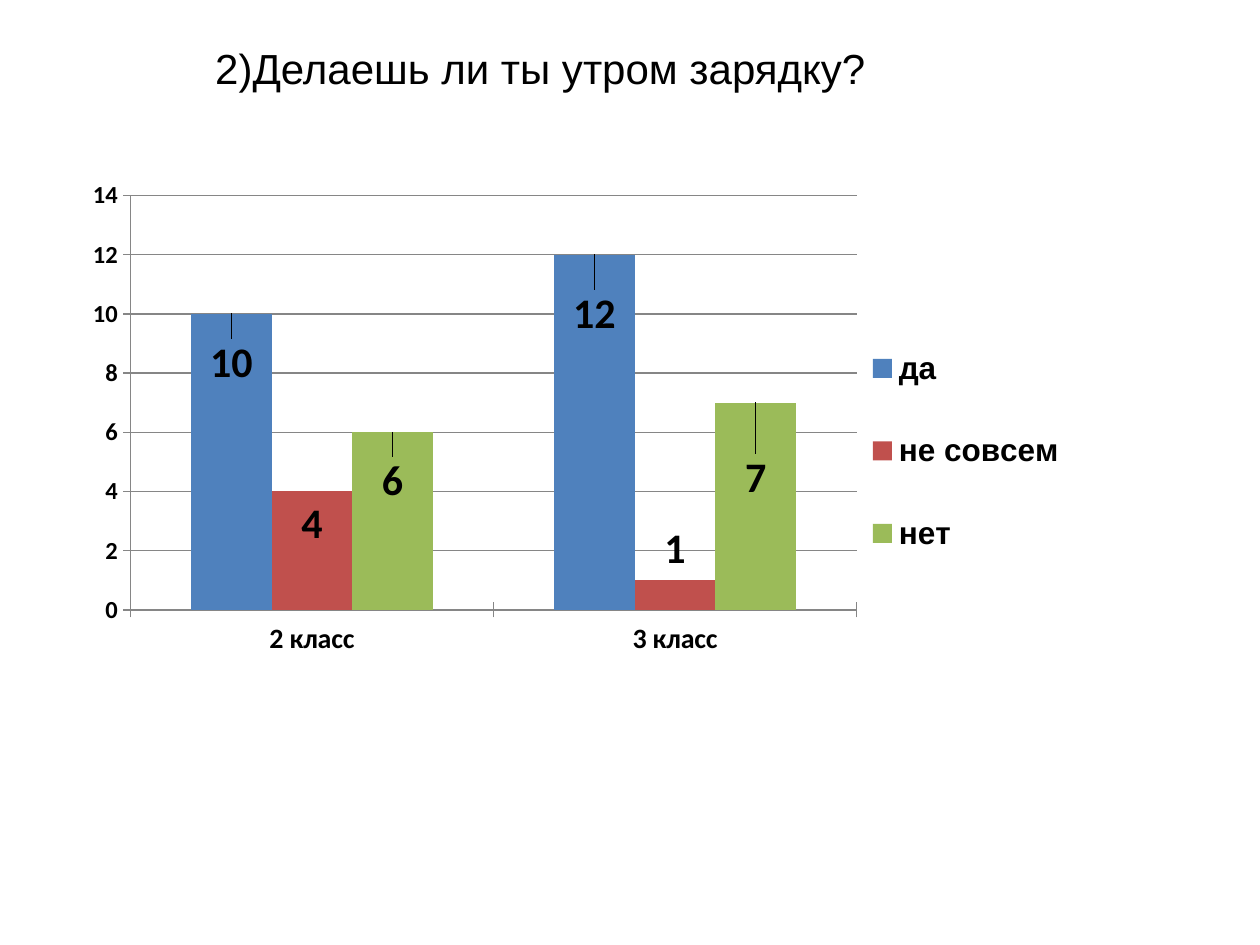
from pptx import Presentation
from pptx.chart.data import CategoryChartData
from pptx.dml.color import RGBColor
from pptx.enum.chart import XL_CHART_TYPE as Kind, XL_LABEL_POSITION as Spot
from pptx.enum.chart import XL_LEGEND_POSITION as Side, XL_TICK_MARK as Tick
from pptx.enum.text import MSO_ANCHOR as Anchor, MSO_AUTO_SIZE as Auto, PP_ALIGN as Align
from pptx.oxml import parse_xml
from pptx.oxml.ns import nsdecls
from pptx.util import Inches, Pt

BLACK = RGBColor(0x00, 0x00, 0x00)
GRAY = RGBColor(0x86, 0x86, 0x86)
BLUE = RGBColor(0x4F, 0x81, 0xBD)
RED = RGBColor(0xC0, 0x50, 0x4D)
GREEN = RGBColor(0x9B, 0xBB, 0x59)

CLASSES = ["2 класс", "3 класс"]
# Answer, counts by class, bar colour, downward label shift by class
ANSWERS = [
    ("да", (10, 12), BLUE, (0.15, 0.17)),
    ("не совсем", (4, 1), RED, (0.12, None)),
    ("нет", (6, 7), GREEN, (0.15, 0.2)),
]


def style(font, size, bold=True, name="Calibri"):
    font.size = Pt(size)
    font.bold = bold
    font.name = name
    font.color.rgb = BLACK


def layout(modes="", **sizes):
    """Return a manual chart layout; sizes are fractions of the chart."""
    parts = "".join(f'<c:{key} val="{val}"/>' for key, val in sizes.items())
    return parse_xml(
        f'<c:layout {nsdecls("c")}><c:manualLayout>{modes}{parts}'
        "</c:manualLayout></c:layout>"
    )


def add_title(slide, text):
    box = slide.shapes.add_textbox(Inches(1.61), Inches(0.29), Inches(5.41), Inches(0.5))
    frame = box.text_frame
    frame.word_wrap = True
    frame.auto_size = Auto.SHAPE_TO_FIT_TEXT
    frame.vertical_anchor = Anchor.MIDDLE
    para = frame.paragraphs[0]
    para.alignment = Align.JUSTIFY
    run = para.add_run()
    run.text = text
    style(run.font, 24, False, "Arial")


def style_axis(axis, size):
    axis.major_tick_mark = Tick.CROSS
    axis.minor_tick_mark = Tick.NONE
    axis.format.line.color.rgb = GRAY
    axis.format.line.width = Pt(0.75)
    style(axis.tick_labels.font, size)


def add_labels(series, shifts):
    labels = series.data_labels
    labels.show_value = True
    labels.position = Spot.OUTSIDE_END
    style(labels.font, 24)
    for i, shift in enumerate(shifts):
        if shift is not None:
            label = series.points[i].data_label
            label.position = Spot.OUTSIDE_END
            style(label.font, 24)


def place_parts(chart):
    root = chart.element
    # Plot area
    plot = root.xpath(".//c:plotArea")[0]
    for old in plot.xpath("./c:layout"):
        plot.remove(old)
    modes = '<c:layoutTarget val="inner"/><c:xMode val="edge"/><c:yMode val="edge"/>'
    plot.insert(0, layout(modes, x=0.056, y=0.038, w=0.725, h=0.774))
    # Legend
    edge = '<c:xMode val="edge"/><c:yMode val="edge"/>'
    side = root.xpath(".//c:legend/c:legendPos")[0]
    for old in root.xpath(".//c:legend/c:layout"):
        old.getparent().remove(old)
    side.addnext(layout(edge, x=0.78, y=0.24, w=0.22, h=0.55))
    # Value labels moved down into their bars
    shifts = [s for answer in ANSWERS for s in answer[3] if s is not None]
    for idx, shift in zip(root.xpath(".//c:dLbl/c:idx"), shifts):
        idx.addnext(layout(x=0, y=shift))


def add_bars(slide):
    data = CategoryChartData()
    data.categories = CLASSES
    for name, counts, _, _ in ANSWERS:
        data.add_series(name, counts)
    frame = slide.shapes.add_chart(
        Kind.COLUMN_CLUSTERED, Inches(0.59), Inches(1.39), Inches(7.95), Inches(4.25), data
    )
    chart = frame.chart
    chart.has_title = False
    style(chart.font, 10, False)

    # Bars
    bars = chart.plots[0]
    bars.vary_by_categories = False
    bars.gap_width = 150
    bars.overlap = 0
    for series, (_, _, color, shifts) in zip(bars.series, ANSWERS):
        series.format.fill.solid()
        series.format.fill.fore_color.rgb = color
        series.invert_if_negative = False
        add_labels(series, shifts)

    # Axes
    style_axis(chart.category_axis, 16)
    axis = chart.value_axis
    style_axis(axis, 14)
    axis.minimum_scale, axis.maximum_scale, axis.major_unit = 0, 14, 2
    axis.has_major_gridlines = True
    axis.major_gridlines.format.line.color.rgb = GRAY
    axis.major_gridlines.format.line.width = Pt(0.75)

    # Legend
    chart.has_legend = True
    chart.legend.position = Side.RIGHT
    chart.legend.include_in_layout = False
    style(chart.legend.font, 18, name="Arial")
    place_parts(chart)


def main():
    deck = Presentation()
    deck.slide_width, deck.slide_height = Inches(10), Inches(7.5)
    slide = deck.slides.add_slide(deck.slide_layouts[6])
    add_title(slide, "2)Делаешь ли ты утром зарядку?")
    add_bars(slide)
    deck.save("out.pptx")


if __name__ == "__main__":
    main()
